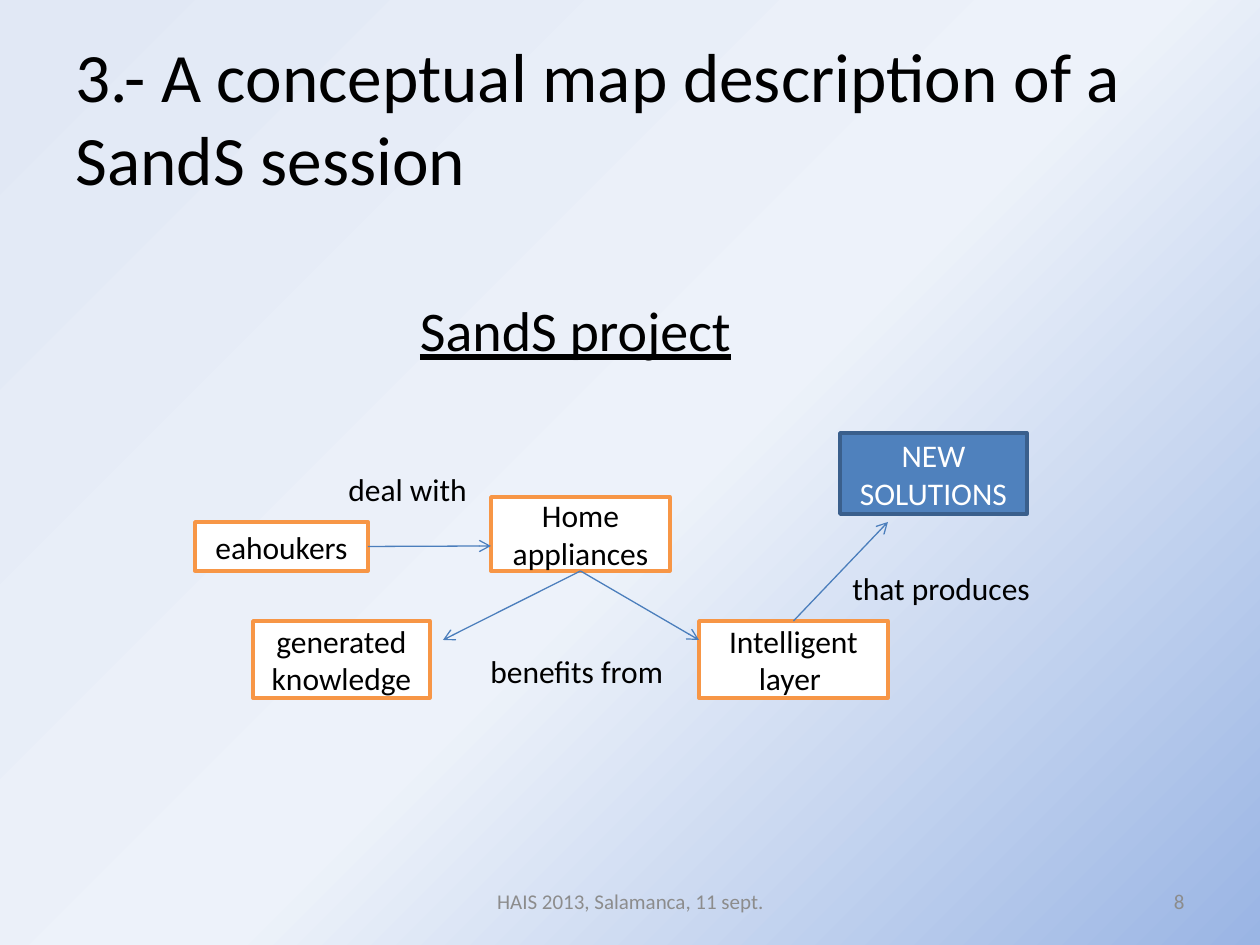
from lxml import etree
from pptx import Presentation
from pptx.dml.color import RGBColor
from pptx.enum.shapes import MSO_CONNECTOR, MSO_SHAPE
from pptx.enum.text import MSO_ANCHOR, MSO_AUTO_SIZE, PP_ALIGN
from pptx.oxml.ns import qn
from pptx.util import Emu, Pt

EMU_PER_PX = 914400 / 126
FONT = "Calibri"
TITLE_ONLY = 5
BOTTOM, RIGHT, TOP = 2, 3, 0
LEFT_ALIGN, CENTER, RIGHT_ALIGN = PP_ALIGN.LEFT, PP_ALIGN.CENTER, PP_ALIGN.RIGHT
MIDDLE, ANCHOR_TOP = MSO_ANCHOR.MIDDLE, MSO_ANCHOR.TOP
NO_AUTOSIZE = MSO_AUTO_SIZE.NONE
RECTANGLE = MSO_SHAPE.RECTANGLE
STRAIGHT = MSO_CONNECTOR.STRAIGHT

COLORS = {
    "text": "000000",
    "white": "FFFFFF",
    "muted": "8C8C8C",
    "concept_line": "F79646",
    "result": "4F81BD",
    "result_line": "3A5F8C",
    "arrow": "4B7EBC",
}
BACKGROUND_STOPS = [(0, "9AB5E4"), (47, "EDF2FA"), (100, "E1E8F5")]


def px(value):
    return Emu(round(value * EMU_PER_PX))


def color(name):
    return RGBColor.from_string(COLORS[name])


def set_background(slide):
    fill = slide.background.fill
    fill.gradient()
    gradient = slide.background._cSld.find(".//" + qn("a:gradFill"))
    for child in list(gradient):
        gradient.remove(child)
    stops = etree.SubElement(gradient, qn("a:gsLst"))
    for position, value in BACKGROUND_STOPS:
        stop = etree.SubElement(stops, qn("a:gs"), pos=str(position * 1000))
        etree.SubElement(stop, qn("a:srgbClr"), val=value)
    shading = etree.SubElement(gradient, qn("a:path"), path="circle")
    etree.SubElement(shading, qn("a:fillToRect"), l="100000", t="100000")


def write_text(shape, text, size, color_name, align, anchor, underline=None):
    frame = shape.text_frame
    frame.word_wrap = True
    frame.auto_size = NO_AUTOSIZE
    frame.vertical_anchor = anchor
    paragraph = frame.paragraphs[0]
    paragraph.alignment = align
    run = paragraph.add_run()
    run.text = text
    run.font.name = FONT
    run.font.size = Pt(size)
    run.font.underline = underline
    run.font.color.rgb = color(color_name)


def set_title(slide, text, left, top, width, height):
    title = slide.shapes.title
    title.left, title.top = px(left), px(top)
    title.width, title.height = px(width), px(height)
    write_text(title, text, 39.6, "text", LEFT_ALIGN, MIDDLE)


def add_label(slide, text, left, top, width, height, size=18, color_name="text",
              align=LEFT_ALIGN, anchor=ANCHOR_TOP, underline=None):
    label = slide.shapes.add_textbox(px(left), px(top), px(width), px(height))
    write_text(label, text, size, color_name, align, anchor, underline)


def add_box(slide, text, left, top, width, height,
            fill="white", line="concept_line", text_color="text"):
    box = slide.shapes.add_shape(RECTANGLE, px(left), px(top), px(width), px(height))
    box.shadow.inherit = False
    box.fill.solid()
    box.fill.fore_color.rgb = color(fill)
    box.line.color.rgb = color(line)
    box.line.width = Pt(2)
    write_text(box, text, 18, text_color, CENTER, MIDDLE)
    return box


def add_arrow(slide, source, side, end_x, end_y):
    arrow = slide.shapes.add_connector(STRAIGHT, 0, 0, px(end_x), px(end_y))
    arrow.begin_connect(source, side)
    arrow.end_x, arrow.end_y = px(end_x), px(end_y)
    arrow.line.color.rgb = color("arrow")
    arrow.line.width = Pt(0.75)
    etree.SubElement(arrow.line._get_or_add_ln(), qn("a:tailEnd"), type="arrow")
    etree.SubElement(arrow._element.spPr, qn("a:effectLst"))


def main():
    presentation = Presentation()
    presentation.slide_width, presentation.slide_height = px(1260), px(945)
    slide = presentation.slides.add_slide(presentation.slide_layouts[TITLE_ONLY])
    set_background(slide)

    set_title(slide, "3.- A conceptual map description of a SandS session",
              63, 38, 1134, 157)
    add_label(slide, "SandS project", 391, 289, 369, 81,
              size=32, align=CENTER, underline=True)

    eahoukers = add_box(slide, "eahoukers", 195, 522, 173, 49)
    appliances = add_box(slide, "Home appliances", 491, 497, 179, 74)
    add_box(slide, "generated knowledge", 253, 621, 177, 77)
    intelligent_layer = add_box(slide, "Intelligent layer ", 699, 621, 189, 77)
    add_box(slide, "NEW SOLUTIONS", 840, 433, 187, 81,
            fill="result", line="result_line", text_color="white")

    add_arrow(slide, eahoukers, RIGHT, 491, 546)
    add_arrow(slide, appliances, BOTTOM, 443, 640)
    add_arrow(slide, appliances, BOTTOM, 699, 640)
    add_arrow(slide, intelligent_layer, TOP, 888, 522)

    add_label(slide, "deal with", 336, 464, 155, 50)
    add_label(slide, "benefits from", 478, 646, 207, 50)
    add_label(slide, "that produces", 840, 563, 206, 50)

    footer = {"size": 12, "color_name": "muted", "anchor": MIDDLE}
    add_label(slide, "HAIS 2013, Salamanca, 11 sept.", 431, 876, 399, 50,
              align=CENTER, **footer)
    add_label(slide, "8", 903, 876, 294, 50, align=RIGHT_ALIGN, **footer)

    presentation.save("out.pptx")


if __name__ == "__main__":
    main()
